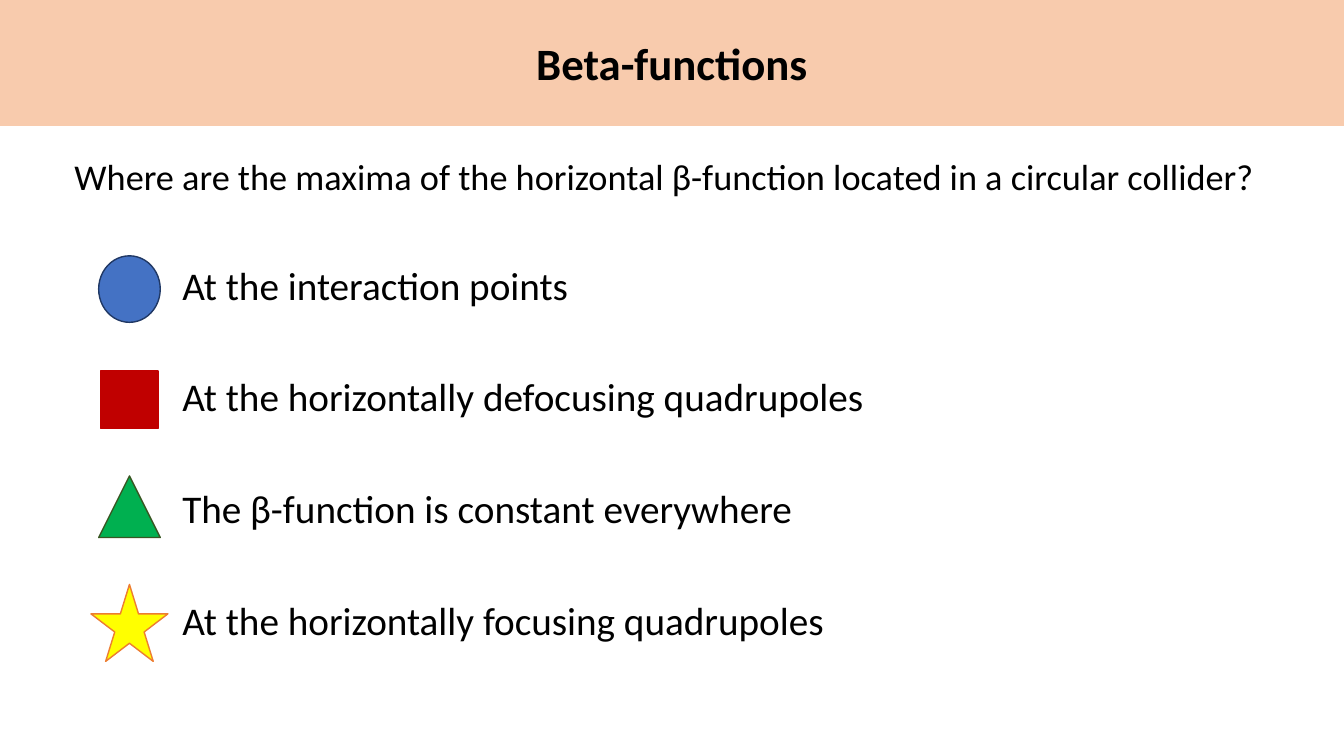
from lxml import etree
from pptx import Presentation
from pptx import util as u
from pptx.dml.color import RGBColor
from pptx.enum import shapes, text
from pptx.oxml.ns import qn

COLORS = {
    "band": "F8CBAD", "ink": "000000",
    "blue": "4472C4", "navy": "203864", "red": "C00000",
    "green": "00B050", "forest": "385723",
    "yellow": "FFFF00", "orange": "ED7D31",
}
MARKER = shapes.MSO_SHAPE
MARKER_CENTER = 92.5
ANSWERS = [
    ("At the interaction points", MARKER.OVAL, 206.5, 44, 47.5, "blue", "navy"),
    ("At the horizontally defocusing quadrupoles", MARKER.RECTANGLE, 285.5, 41, 41, "red", "red"),
    ("The β-function is constant everywhere", MARKER.ISOSCELES_TRIANGLE, 362, 44, 44, "green", "forest"),
    ("At the horizontally focusing quadrupoles", MARKER.STAR_5_POINT, 445, 55, 55, "yellow", "orange"),
]


class QuizSlide:
    """Draws the parts of a quiz slide in one shared style."""

    font = "Calibri"

    def __init__(self, slide):
        self.slide = slide

    def color(self, name):
        return RGBColor.from_string(COLORS[name])

    def place(self, holder, left, top, width, height):
        holder.left, holder.top = u.Pt(left), u.Pt(top)
        holder.width, holder.height = u.Pt(width), u.Pt(height)

    def add_words(self, paragraph, words, size, bold=False):
        run = paragraph.add_run()
        run.text = words
        run.font.name, run.font.size, run.font.bold = self.font, u.Pt(size), bold
        run.font.color.rgb = self.color("ink")

    def heading(self, words, box, size):
        band = self.slide.shapes.title
        self.place(band, *box)
        band.fill.solid()
        band.fill.fore_color.rgb = self.color("band")
        band.text_frame.auto_size = text.MSO_AUTO_SIZE.NONE
        band.text_frame.vertical_anchor = text.MSO_ANCHOR.MIDDLE
        line = band.text_frame.paragraphs[0]
        line.alignment = text.PP_ALIGN.CENTER
        self.add_words(line, words, size, bold=True)

    def body(self, index, lines, box, size, gap=0):
        holder = self.slide.placeholders[index]
        self.place(holder, *box)
        frame = holder.text_frame
        frame.word_wrap = True
        frame.auto_size = text.MSO_AUTO_SIZE.NONE
        for number, words in enumerate(lines):
            line = frame.add_paragraph() if number else frame.paragraphs[0]
            line.line_spacing = 0.9
            line.space_before = u.Pt(gap if number else 0)
            properties = line._p.get_or_add_pPr()
            properties.set("marL", "0")
            properties.set("indent", "0")
            etree.SubElement(properties, qn("a:buNone"))
            self.add_words(line, words, size)

    def marker(self, kind, middle, width, height, fill, outline):
        symbol = self.slide.shapes.add_shape(
            kind, u.Pt(MARKER_CENTER - width / 2), u.Pt(middle - height / 2),
            u.Pt(width), u.Pt(height))
        symbol.shadow.inherit = False
        symbol.fill.solid()
        symbol.fill.fore_color.rgb = self.color(fill)
        symbol.line.color.rgb = self.color(outline)
        symbol.line.width = u.Pt(1)


def main():
    deck = Presentation()
    deck.slide_width, deck.slide_height = u.Pt(960), u.Pt(540)
    quiz = QuizSlide(deck.slides.add_slide(deck.slide_layouts.get_by_name("Two Content")))
    quiz.heading("Beta-functions", (0, 0, 960, 90), 32)
    question = "Where are the maxima of the horizontal β-function located in a circular collider?"
    quiz.body(1, [question], (46, 110, 868, 57), 25.9)
    quiz.body(2, [answer[0] for answer in ANSWERS], (123, 186.5, 777, 301.5), 28, gap=49.7)
    for _, *look in ANSWERS:
        quiz.marker(*look)
    deck.save("out.pptx")


if __name__ == "__main__":
    main()
